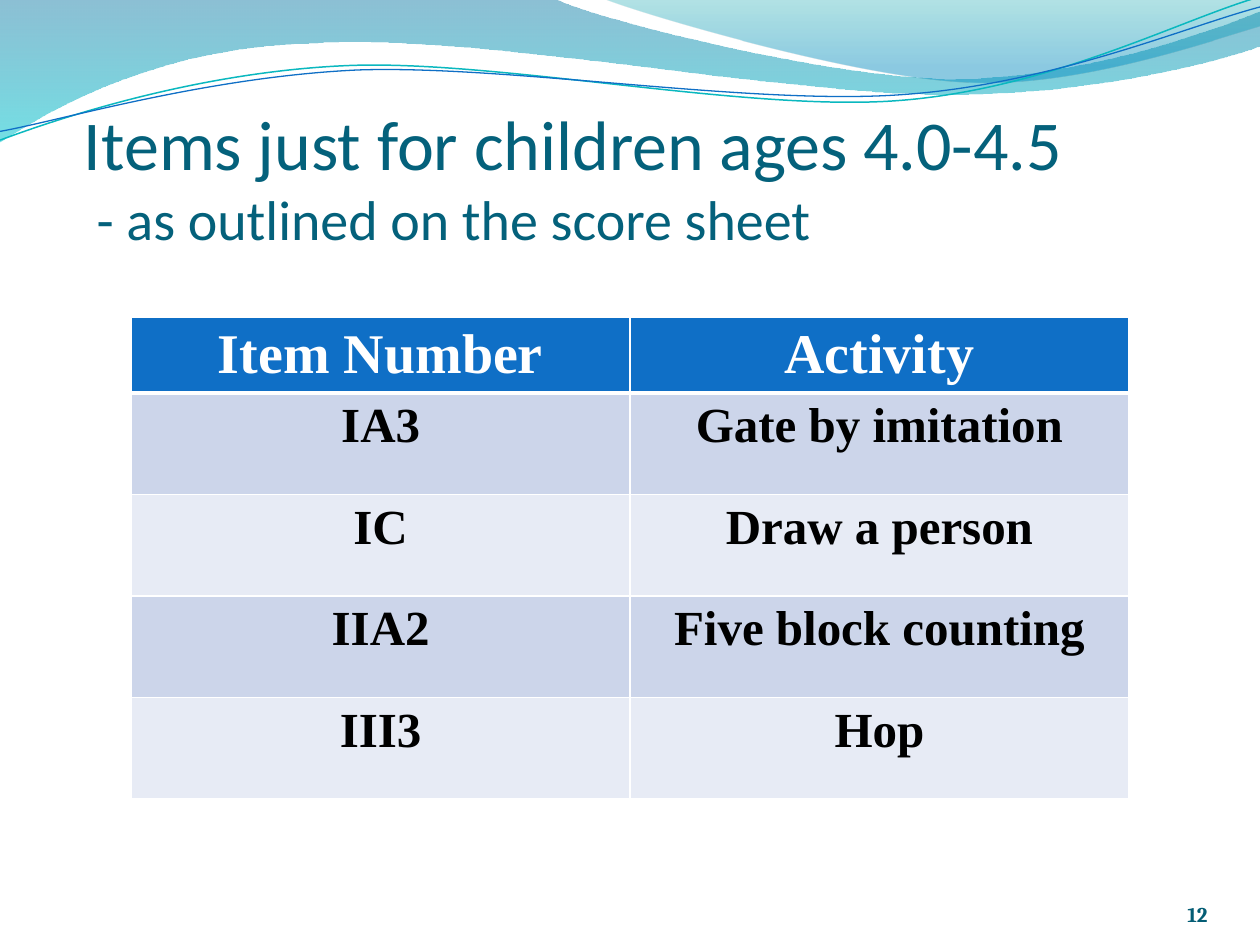
from lxml import etree
from pptx import Presentation
from pptx.dml.color import RGBColor
from pptx.enum.text import MSO_ANCHOR as Anchor, MSO_AUTO_SIZE as AutoSize, PP_ALIGN as Align
from pptx.oxml.ns import qn
from pptx.util import Pt

TITLE = [("Items just for children ages 4.0-4.5 ", 40), (" - as outlined on the score sheet", 32)]
PAGE_NUMBER = "12"
ROWS = [
    ("Item Number", "Activity"),
    ("IA3", "Gate by imitation"),
    ("IC", "Draw a person"),
    ("IIA2", "Five block counting"),
    ("III3", "Hop"),
]
HEADER_FILL, BAND_FILLS = "0F6FC6", ("CCD5EA", "E7EBF5")

# Outlines in points: a pair is a corner, six numbers are a Bézier curve.
# Gradient stops: position, colour, opacity in percent.
BANDS = [
    ([(0, 0), (317, -0.7), (343, 12, 478, 45, 546, 45), (614, 45, 690, 19, 720, 6.5),
      (721, 26), (708, 32, 626, 55, 537, 54), (448, 54, 275, 20, 185, 24.5),
      (93, 26, 33, 60, -0.7, 81.4)],
     [(0, "0074A1", 45), (1, "00C6CF", 55)]),
    ([(345, -0.7), (366, 8, 491, 45, 554, 47), (616, 50, 692, 23, 720, 15), (720, 0)],
     [(0, "00A1A9", 30), (0.8, "008BBF", 45)]),
]
WAVES = [
    ([(-1.4, 63.1), (34.2, 51.7, 114.3, 29.4, 199.4, 29.9),
      (284.4, 30.5, 425.8, 67.2, 512, 64.7), (599.3, 62.3, 676.1, 25.9, 720.6, 15.4)],
     "0AB8BF", 0.85),
    ([(-1.1, 58.1), (33.1, 53.7, 118.2, 32.6, 204.3, 32.7),
      (290.3, 33.7, 429.1, 63.8, 515.3, 61.4), (601.5, 59.4, 679, 30, 721.4, 21)],
     "0F6FC6", 0.75),
]
WAVE_ROTATION = 357.3


def color(hex_value):
    return RGBColor.from_string(hex_value)


def set_all(target, values):
    for name, value in values.items():
        setattr(target, name, value)


def add_run(paragraph, text, size, font, hex_value, bold=False):
    run = paragraph.add_run()
    run.text = text
    set_all(run.font, {"size": Pt(size), "name": font, "bold": bold})
    run.font.color.rgb = color(hex_value)


def add_outline(shapes, outline, close):
    """Add a freeform through the end points, then bend its curved segments."""
    ends = [(Pt(part[-2]), Pt(part[-1])) for part in outline]
    builder = shapes.build_freeform(*ends[0])
    builder.add_line_segments(ends[1:], close=close)
    shape = builder.convert_to_shape()
    shape.shadow.inherit = False
    segments = list(shape._element.iter(qn("a:lnTo")))
    for segment, part in zip(segments, outline[1:]):
        if len(part) == 6:
            segment.tag = qn("a:cubicBezTo")
            for index in (0, 1):
                x, y = part[2 * index:2 * index + 2]
                point = etree.Element(qn("a:pt"), x=str(Pt(x) - shape.left),
                                      y=str(Pt(y) - shape.top))
                segment.insert(index, point)
    return shape


def add_band(shapes, outline, stops):
    shape = add_outline(shapes, outline, True)
    shape.line.fill.background()
    shape.fill.gradient()
    shape.fill.gradient_angle = 270
    for stop, (position, hex_value, _) in zip(shape.fill.gradient_stops, stops):
        stop.position = position
        stop.color.rgb = color(hex_value)
    gradient = shape._element.spPr.find(qn("a:gradFill"))
    for element, (_, _, opacity) in zip(gradient.iter(qn("a:srgbClr")), stops):
        etree.SubElement(element, qn("a:alpha"), val=str(opacity * 1000))


def add_wave(shapes, outline, hex_value, width):
    shape = add_outline(shapes, outline, False)
    shape.rotation = WAVE_ROTATION
    shape.fill.background()
    shape.line.color.rgb = color(hex_value)
    shape.line.width = Pt(width)


def add_borders(cell, bottom_width):
    properties = cell._tc.get_or_add_tcPr()
    for side, width in (("L", 1), ("R", 1), ("T", 1), ("B", bottom_width)):
        line = etree.SubElement(properties, qn(f"a:ln{side}"), w=str(Pt(width)))
        fill = etree.SubElement(line, qn("a:solidFill"))
        etree.SubElement(fill, qn("a:srgbClr"), val="FFFFFF")


def format_title(slide):
    title = slide.shapes.title
    slide.shapes._spTree.append(title._element)  # in front of the waves
    set_all(title, {"left": Pt(48), "top": Pt(54), "width": Pt(648), "height": Pt(90)})
    set_all(title.text_frame, {
        "vertical_anchor": Anchor.BOTTOM, "auto_size": AutoSize.NONE, "word_wrap": True,
        "margin_left": 0, "margin_right": 0, "margin_top": Pt(3.6), "margin_bottom": 0})
    paragraph = title.text_frame.paragraphs[0]
    paragraph.alignment = Align.LEFT
    for index, (text, size) in enumerate(TITLE):
        if index:
            paragraph.add_line_break()
        add_run(paragraph, text, size, "Calibri", "04617B")


def add_page_number(shapes):
    frame = shapes.add_textbox(Pt(522), Pt(492), Pt(168), Pt(37.5)).text_frame
    set_all(frame, {"vertical_anchor": Anchor.BOTTOM, "word_wrap": True, "margin_left": 0,
                    "margin_right": 0, "margin_top": 0, "margin_bottom": 0})
    frame.paragraphs[0].alignment = Align.RIGHT
    add_run(frame.paragraphs[0], PAGE_NUMBER, 12, "Cambria", "045D75", True)


def add_items_table(shapes):
    table = shapes.add_table(len(ROWS), 2, Pt(75), Pt(181.5), Pt(570), Pt(278)).table
    for row_index, texts in enumerate(ROWS):
        header = row_index == 0
        table.rows[row_index].height = Pt(34.5 if header else 58)
        size, text_color = (32, "FFFFFF") if header else (28, "000000")
        for column_index, text in enumerate(texts):
            cell = table.cell(row_index, column_index)
            add_borders(cell, 3 if header else 1)
            cell.margin_bottom = Pt(1)
            cell.fill.solid()
            cell.fill.fore_color.rgb = color(
                HEADER_FILL if header else BAND_FILLS[(row_index - 1) % 2])
            paragraph = cell.text_frame.paragraphs[0]
            paragraph.alignment = Align.CENTER
            add_run(paragraph, text, size, "Times New Roman", text_color, True)


def main():
    presentation = Presentation()
    set_all(presentation, {"slide_width": Pt(720), "slide_height": Pt(540)})
    slide = presentation.slides.add_slide(presentation.slide_layouts[5])
    for outline, stops in BANDS:
        add_band(slide.shapes, outline, stops)
    for outline, hex_value, width in WAVES:
        add_wave(slide.shapes, outline, hex_value, width)
    format_title(slide)
    add_page_number(slide.shapes)
    add_items_table(slide.shapes)
    presentation.save("out.pptx")


if __name__ == "__main__":
    main()
